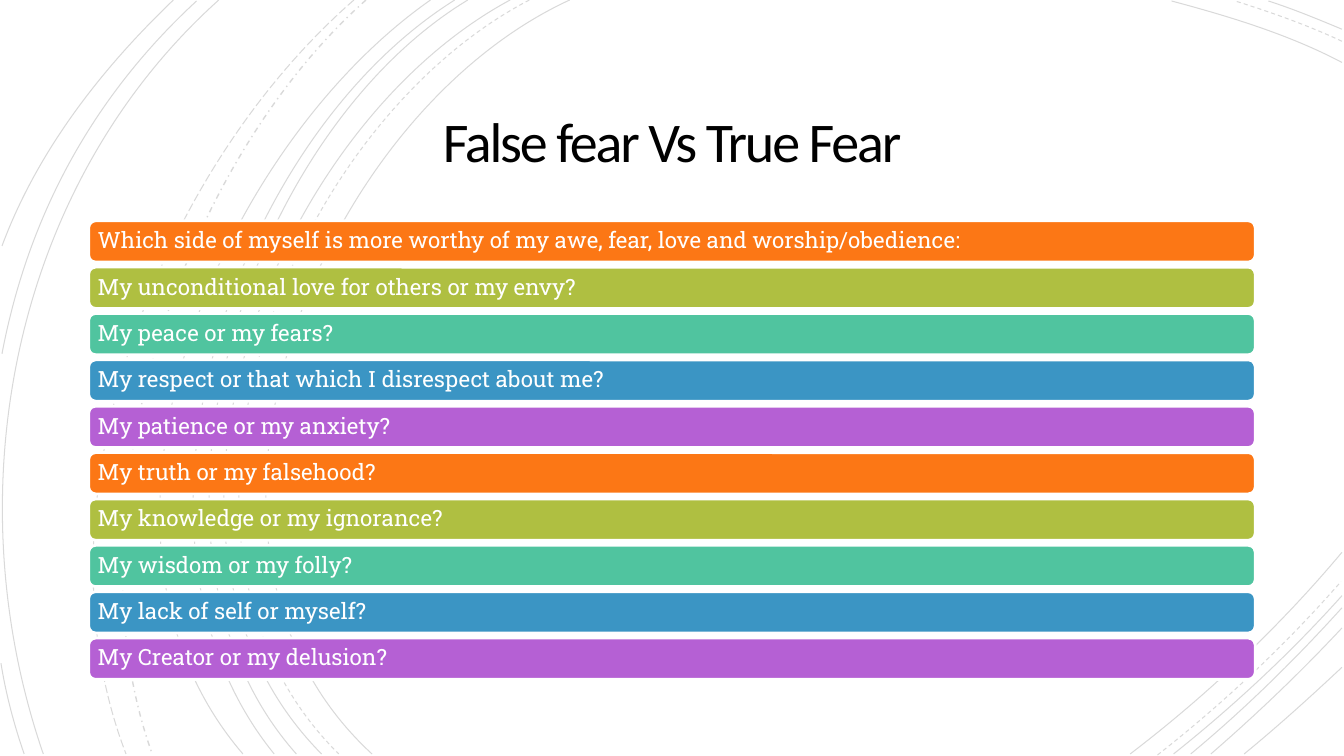
import pptx
import pptx.dml.color
import pptx.enum.dml
import pptx.enum.shapes
import pptx.enum.text
import pptx.oxml
import pptx.oxml.ns
import pptx.util

Inches = pptx.util.Inches
Pt = pptx.util.Pt
DASH = pptx.enum.dml.MSO_LINE
ALIGN = pptx.enum.text.PP_ALIGN
qn = pptx.oxml.ns.qn
NAMESPACE = pptx.oxml.ns.nsdecls("a")

BAR_COLORS = ["FC7715", "AFBF41", "50C49F", "3B95C4", "B560D4"]
QUESTIONS = [
    "Which side of myself is more worthy of my awe, fear, love and worship/obedience:",
    "My unconditional love for others or my envy?",
    "My peace or my fears?",
    "My respect or that which I disrespect about me?",
    "My patience or my anxiety?",
    "My truth or my falsehood?",
    "My knowledge or my ignorance?",
    "My wisdom or my folly?",
    "My lack of self or myself?",
    "My Creator or my delusion?",
]
ARCS = {
    (DASH.SOLID, 0.75): [
        [(5.65, 0), (3.15, 1.15), (1.43, 5.4), (3.69, 7.48)],
        [(13.31, 0.62), (12.78, 0.34), (12.18, 0.16), (11.62, 0.01)],
        [(11.21, 7.48), (11.97, 6.9), (12.69, 6.22), (13.31, 5.48)],
        [(5.06, 0), (2.7, 1.27), (1.1, 5.37), (3.19, 7.48)],
        [(13.31, 0.29), (13.07, 0.19), (12.83, 0.09), (12.58, 0.01)],
        [(11.64, 7.48), (12.23, 7.01), (12.8, 6.48), (13.31, 5.91)],
        [(4.64, 0), (2.44, 1.33), (1.1, 5.41), (2.94, 7.48)],
        [(11.81, 7.48), (12.34, 7.04), (12.84, 6.55), (13.31, 6.03)],
        [(4.51, 0), (2.31, 1.38), (0.97, 5.33), (2.72, 7.48)],
        [(12.01, 7.48), (12.46, 7.09), (12.9, 6.67), (13.31, 6.23)],
        [(4.27, 0), (2.17, 1.47), (0.53, 5.29), (2.41, 7.48)],
        [(12.34, 7.48), (12.67, 7.21), (12.99, 6.92), (13.31, 6.62)],
        [(2.17, 0), (0.11, 1.85), (-0.46, 4.9), (0.43, 7.48)],
        [(1.95, 0.01), (0.92, 0.96), (0.28, 2.14), (0.02, 3.51)],
        [(0.01, 6.58), (0.06, 6.89), (0.14, 7.19), (0.24, 7.48)],
        [(1.72, 0), (1, 0.69), (0.37, 1.5), (0.02, 2.44)],
    ],
    (DASH.DASH, 0.75): [
        [(5.25, 0), (2.85, 1.25), (1.23, 5.37), (3.36, 7.48)],
        [(13.31, 0.41), (12.97, 0.25), (12.6, 0.12), (12.25, 0.01)],
        [(11.48, 7.49), (12.13, 6.98), (12.75, 6.4), (13.3, 5.77)],
    ],
    (DASH.DASH_DOT, 1): [[(3.63, 0), (1.76, 1.66), (0.65, 5.09), (1.51, 7.48)]],
    (DASH.LONG_DASH, 0.75): [[(3.51, 0), (1.57, 1.69), (0.29, 4.99), (1.25, 7.48)]],
}


def color(value):
    return pptx.dml.color.RGBColor.from_string(value)


def apply(target, values):
    for name, value in values.items():
        setattr(target, name, value)


def set_text(shape, text, inset, paragraph_format, font_format, font_color):
    frame = shape.text_frame
    frame.text = text
    sides = ("left", "top", "right", "bottom")
    apply(frame, {f"margin_{side}": Inches(inset) for side in sides})
    apply(frame, {
        "word_wrap": True,
        "auto_size": pptx.enum.text.MSO_AUTO_SIZE.NONE,
        "vertical_anchor": pptx.enum.text.MSO_ANCHOR.MIDDLE,
    })
    paragraph = frame.paragraphs[0]
    apply(paragraph, paragraph_format)
    run = paragraph.runs[0]
    apply(run.font, font_format)
    run.font.color.rgb = color(font_color)
    return run


def add_curve(slide, controls, left, top):
    start, *others = [(Inches(left + x), Inches(top + y)) for x, y in controls]
    builder = slide.shapes.build_freeform(*start, scale=1.0)
    builder.add_line_segments(others, close=False)
    shape = builder.convert_to_shape()
    outline = shape.element.find(".//" + qn("a:path"))
    curve = pptx.oxml.parse_xml(f"<a:cubicBezTo {NAMESPACE}/>")
    for segment in outline.findall(qn("a:lnTo")):
        curve.append(segment[0])
        outline.remove(segment)
    outline.append(curve)
    return shape


def add_arcs(slide, left, top):
    for (dash, width), arcs in ARCS.items():
        for controls in arcs:
            shape = add_curve(slide, controls, left, top)
            shape.shadow.inherit = False
            shape.fill.background()
            shape.line.color.rgb = color("000000")
            apply(shape.line, {"width": Pt(width), "dash_style": dash})
            ink = shape.element.find(".//" + qn("a:ln") + "//" + qn("a:srgbClr"))
            ink.append(pptx.oxml.parse_xml(f'<a:alpha {NAMESPACE} val="15000"/>'))


def add_title(slide, left, top, width, height):
    title = slide.shapes.title
    title.element.getparent().append(title.element)
    apply(title, {"left": Inches(left), "top": Inches(top),
                  "width": Inches(width), "height": Inches(height)})
    run = set_text(title, "False fear Vs True Fear", 0.25,
                   {"alignment": ALIGN.CENTER, "line_spacing": 0.85},
                   {"size": Pt(40), "name": "Calibri"}, "000000")
    run._r.get_or_add_rPr().set("spc", "-150")


def add_questions(slide, left, top, width, height, gap=0.05):
    bar_height = (height + gap) / len(QUESTIONS) - gap
    for index, question in enumerate(QUESTIONS):
        bar = slide.shapes.add_shape(
            pptx.enum.shapes.MSO_SHAPE.ROUNDED_RECTANGLE,
            Inches(left), Inches(top + index * (bar_height + gap)),
            Inches(width), Inches(bar_height))
        bar.shadow.inherit = False
        bar.fill.solid()
        bar.fill.fore_color.rgb = color(BAR_COLORS[index % len(BAR_COLORS)])
        bar.line.color.rgb = color("FFFFFF")
        bar.line.width = Pt(2)
        set_text(bar, question, 0.07,
                 {"alignment": ALIGN.LEFT, "line_spacing": 0.9},
                 {"size": Pt(16), "name": "Roboto Slab"}, "FFFFFF")


def main():
    presentation = pptx.Presentation()
    apply(presentation, {"slide_width": Inches(13.33), "slide_height": Inches(7.5)})
    slide = presentation.slides.add_slide(presentation.slide_layouts[5])
    slide.background.fill.solid()
    slide.background.fill.fore_color.rgb = color("FFFFFF")
    add_arcs(slide, 0, 0)
    add_title(slide, 1.92, 0.87, 9.49, 1.15)
    add_questions(slide, 0.88, 2.19, 11.57, 4.55)
    presentation.save("out.pptx")


if __name__ == "__main__":
    main()
